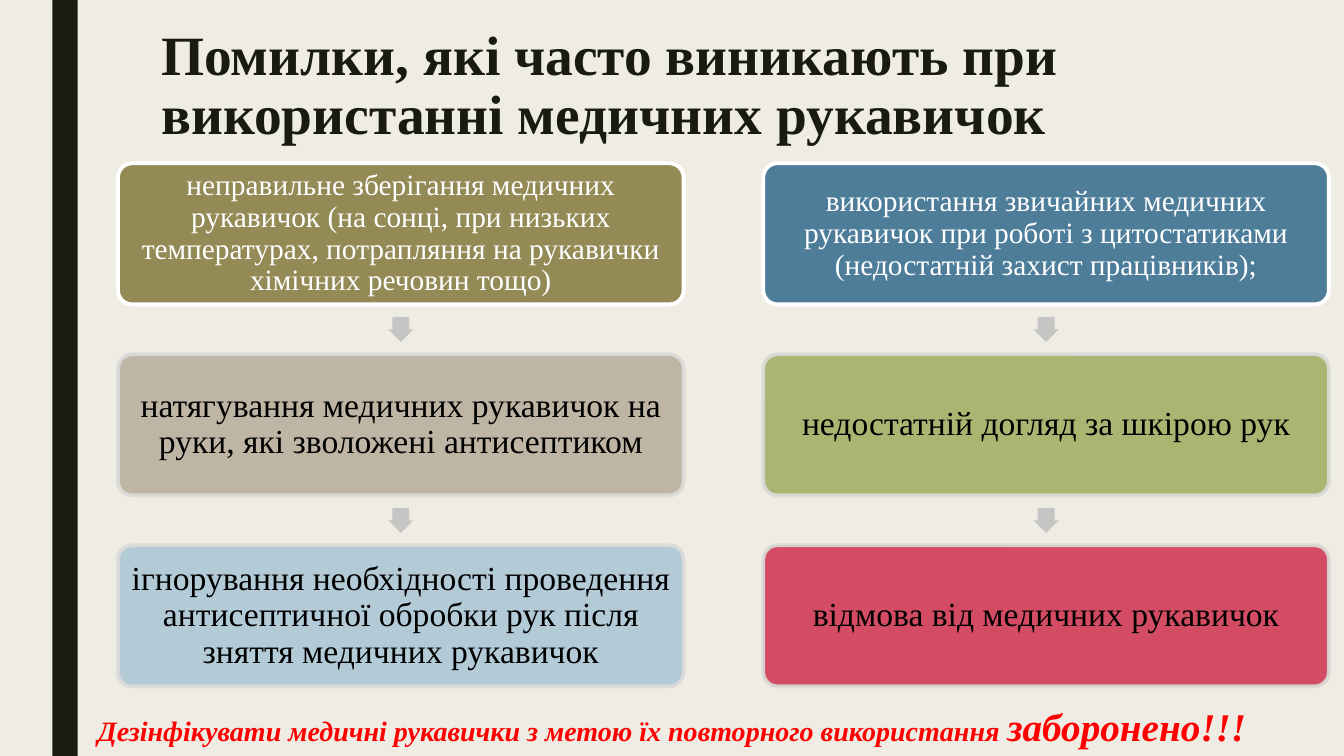
"""Builds a slide on common mistakes in using medical gloves."""
from dataclasses import dataclass

from lxml.etree import SubElement
from pptx import Presentation
from pptx.dml.color import RGBColor
from pptx.enum.shapes import MSO_SHAPE
from pptx.enum.text import MSO_ANCHOR, PP_ALIGN
from pptx.oxml.ns import qn
from pptx.util import Inches, Pt


@dataclass(frozen=True)
class Theme:
    """Colours, font and type sizes of the slide."""
    font: str = "Times New Roman"
    background: str = "EFEDE3"
    dark: str = "191B0E"
    white: str = "FFFFFF"
    black: str = "000000"
    warning: str = "FF0000"
    arrow: str = "C5C5C3"
    soft_border: str = "DADBD9"
    border_width: float = 2.75
    title_size: float = 39.6
    head_size: float = 21
    step_size: float = 24
    note_size: float = 20
    shout_size: float = 28


THEME = Theme()

TITLE = "Помилки, які часто виникають при використанні медичних рукавичок"
NOTE = "Дезінфікувати медичні рукавички з метою їх повторного використання "
SHOUT = "заборонено!!!"

CHAINS = [
    [
        ("неправильне зберігання медичних рукавичок (на сонці, при низьких "
         "температурах, потрапляння на рукавички хімічних речовин тощо)", "948A55"),
        ("натягування медичних рукавичок на руки, які зволожені антисептиком", "BAB09E"),
        ("ігнорування необхідності проведення антисептичної обробки рук "
         "після зняття медичних рукавичок", "ADC7D6"),
    ],
    [
        ("використання звичайних медичних рукавичок при роботі з цитостатиками "
         "(недостатній захист працівників);", "4D7D99"),
        ("недостатній догляд за шкірою рук", "A3AF65"),
        ("відмова від медичних рукавичок", "D13B56"),
    ],
]

CHAIN_LEFT, CHAIN_TOP = 1.17, 1.62
CHAIN_PITCH, STEP_PITCH = 6.4, 1.895
STEP_WIDTH, STEP_HEIGHT = 5.61, 1.4
ARROW_SIZE = 0.25


def format_run(run, size, color, bold=False, italic=False):
    """Give a run the theme font with a size, colour and style."""
    font = run.font
    font.name = THEME.font
    font.size = Pt(size)
    font.bold = bold
    font.italic = italic
    font.color.rgb = RGBColor.from_string(color)


def add_block(slide, kind, left, top, width, height, color):
    """Add a plain filled shape without outline or shadow."""
    block = slide.shapes.add_shape(
        kind, Inches(left), Inches(top), Inches(width), Inches(height))
    block.shadow.inherit = False
    block.fill.solid()
    block.fill.fore_color.rgb = RGBColor.from_string(color)
    block.line.fill.background()
    return block


def add_text_area(slide, left, top, width, height):
    """Add a wrapping text box and return its text frame."""
    area = slide.shapes.add_textbox(
        Inches(left), Inches(top), Inches(width), Inches(height))
    area.text_frame.word_wrap = True
    return area.text_frame


def make_translucent(block):
    """Set the fill and outline of a block to 90 % opacity."""
    for color in block._element.spPr.iter(qn("a:srgbClr")):
        SubElement(color, qn("a:alpha")).set("val", "90000")


def add_step(slide, left, top, wording, color, is_head):
    """Add one rounded step of a chain with its centred wording."""
    step = add_block(slide, MSO_SHAPE.ROUNDED_RECTANGLE,
                     left, top, STEP_WIDTH, STEP_HEIGHT, color)
    step.adjustments[0] = 0.1
    border = THEME.white if is_head else THEME.soft_border
    step.line.color.rgb = RGBColor.from_string(border)
    step.line.width = Pt(THEME.border_width)
    if not is_head:
        make_translucent(step)

    frame = step.text_frame
    frame.word_wrap = True
    frame.vertical_anchor = MSO_ANCHOR.MIDDLE
    frame.margin_left = frame.margin_right = Inches(0.03)
    frame.margin_top = frame.margin_bottom = Inches(0.03)
    frame.text = wording
    paragraph = frame.paragraphs[0]
    paragraph.alignment = PP_ALIGN.CENTER
    paragraph.line_spacing = 0.9
    size = THEME.head_size if is_head else THEME.step_size
    format_run(paragraph.runs[0], size, THEME.white if is_head else THEME.black)


def add_step_arrow(slide, chain_left, step_top):
    """Add the down-pointing arrow in the gap below a step."""
    gap = STEP_PITCH - STEP_HEIGHT
    arrow = add_block(slide, MSO_SHAPE.RIGHT_ARROW,
                      chain_left + (STEP_WIDTH - ARROW_SIZE) / 2,
                      step_top + STEP_HEIGHT + (gap - ARROW_SIZE) / 2,
                      ARROW_SIZE, ARROW_SIZE, THEME.arrow)
    arrow.rotation = 90
    arrow.adjustments[0] = 0.667
    arrow.adjustments[1] = 0.5


def add_chain(slide, left, steps):
    """Add a column of steps joined by arrows."""
    for row, (wording, color) in enumerate(steps):
        top = CHAIN_TOP + row * STEP_PITCH
        add_step(slide, left, top, wording, color, is_head=row == 0)
        if row < len(steps) - 1:
            add_step_arrow(slide, left, top)


def add_title(slide):
    """Add the slide heading."""
    frame = add_text_area(slide, 1.5, 0.21, 11.33, 1.31)
    frame.vertical_anchor = MSO_ANCHOR.MIDDLE
    frame.text = TITLE
    paragraph = frame.paragraphs[0]
    paragraph.line_spacing = 0.89
    format_run(paragraph.runs[0], THEME.title_size, THEME.dark, bold=True)


def add_warning(slide):
    """Add the closing warning with its emphasised last word."""
    paragraph = add_text_area(slide, 0.87, 6.92, 12.46, 0.57).paragraphs[0]
    for wording, size in ((NOTE, THEME.note_size), (SHOUT, THEME.shout_size)):
        run = paragraph.add_run()
        run.text = wording
        format_run(run, size, THEME.warning, bold=True, italic=True)


def main():
    """Build and save the slide."""
    presentation = Presentation()
    presentation.slide_width = Inches(13.33)
    presentation.slide_height = Inches(7.5)
    slide = presentation.slides.add_slide(presentation.slide_layouts[6])
    slide.background.fill.solid()
    slide.background.fill.fore_color.rgb = RGBColor.from_string(THEME.background)

    add_block(slide, MSO_SHAPE.RECTANGLE, 0.52, 0, 0.25, 7.5, THEME.dark)
    add_title(slide)
    for column, steps in enumerate(CHAINS):
        add_chain(slide, CHAIN_LEFT + column * CHAIN_PITCH, steps)
    add_warning(slide)
    presentation.save("out.pptx")


if __name__ == "__main__":
    main()
